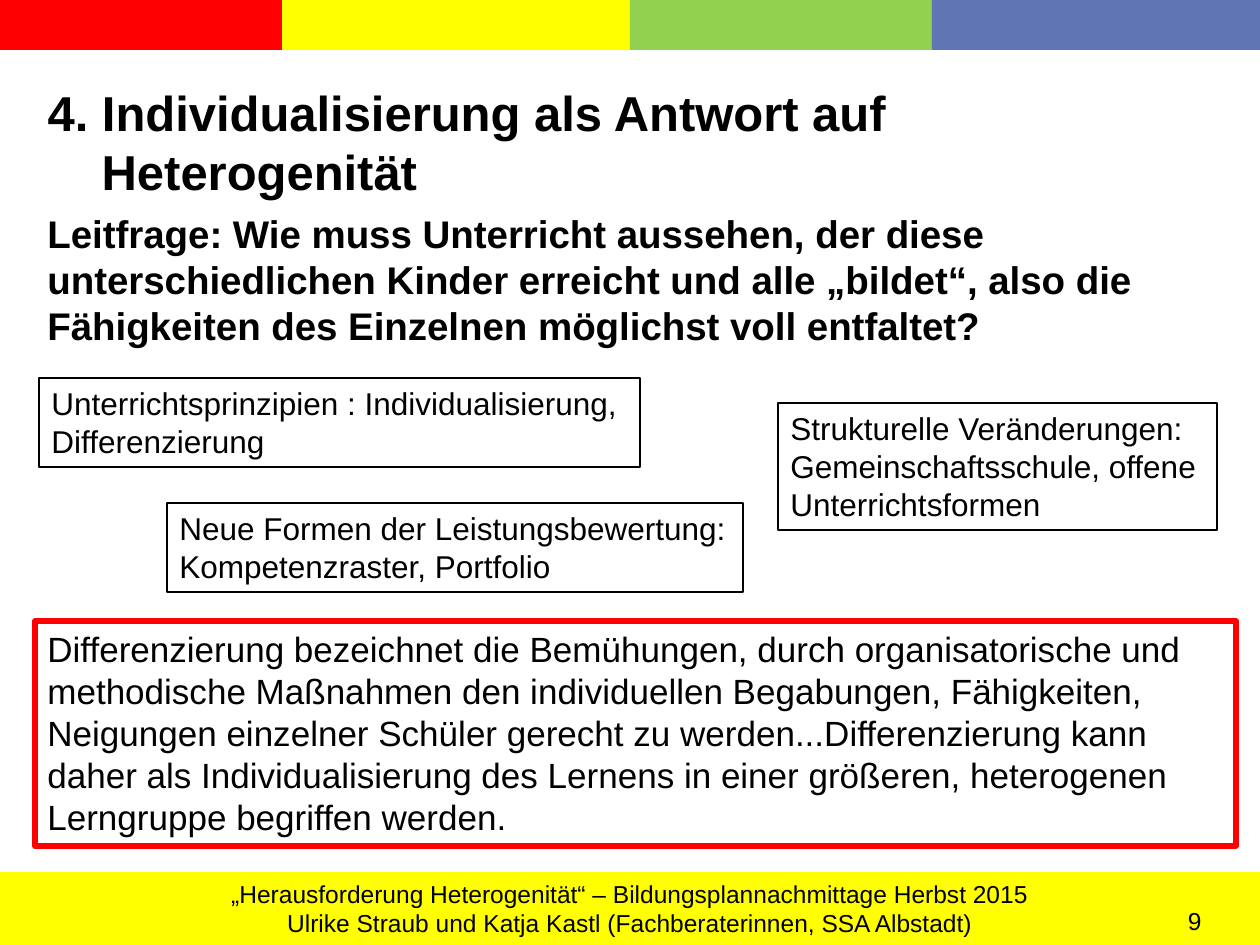
from dataclasses import dataclass
from itertools import pairwise

from pptx import Presentation
from pptx.dml.color import RGBColor
from pptx.enum.shapes import MSO_SHAPE as Shape
from pptx.enum.text import MSO_ANCHOR as Anchor, PP_ALIGN as Align
from pptx.util import Emu, Pt

PX = 914400 // 126
WIDTH, HEIGHT = 1260, 945
FONT = "Arial"
BLACK, RED, YELLOW = "000000", "FF0000", "FFFF00"


@dataclass
class Box:
    x: int
    y: int
    w: int
    h: int
    text: str
    size: int
    bold: bool = False
    line: str | None = None
    line_pt: float = 0.75


BAND_EDGES = [0, 282, 630, 932, WIDTH]
BAND_COLORS = [RED, YELLOW, "92D050", "6076B4"]

TITLE = Box(35, 76, 1170, 131,
            "4. Individualisierung als Antwort auf\vHeterogenität", 28, True)
TITLE_INDENT = 54

BOXES = [
    Box(35, 204, 1188, 152,
        "Leitfrage: Wie muss Unterricht aussehen, der diese unterschiedlichen "
        "Kinder erreicht und alle „bildet“, also die Fähigkeiten des Einzelnen "
        "möglichst voll entfaltet?", 22, True),
    Box(39, 378, 601, 89,
        "Unterrichtsprinzipien : Individualisierung, Differenzierung", 18, line=BLACK),
    Box(778, 403, 439, 127,
        "Strukturelle Veränderungen: Gemeinschaftsschule, offene "
        "Unterrichtsformen", 18, line=BLACK),
    Box(167, 503, 576, 89,
        "Neue Formen der Leistungsbewertung: Kompetenzraster, Portfolio", 18, line=BLACK),
    Box(35, 621, 1201, 225,
        "Differenzierung bezeichnet die Bemühungen, durch organisatorische und "
        "methodische Maßnahmen den individuellen Begabungen, Fähigkeiten, "
        "Neigungen einzelner Schüler gerecht zu werden...Differenzierung kann "
        "daher als Individualisierung des Lernens in einer größeren, heterogenen "
        "Lerngruppe begriffen werden.", 20, line=RED, line_pt=3),
]
FOOTER = Box(0, 872, WIDTH, 73,
             "„Herausforderung Heterogenität“ – Bildungsplannachmittage Herbst 2015\n"
             "Ulrike Straub und Katja Kastl (Fachberaterinnen, SSA Albstadt)", 14)
PAGE_NUMBER = Box(1188, 900, 69, 43, "9", 14)


def px(n: int) -> Emu:
    return Emu(n * PX)


def rgb(color: str) -> RGBColor:
    return RGBColor.from_string(color)


def place(box: Box) -> tuple[Emu, ...]:
    return px(box.x), px(box.y), px(box.w), px(box.h)


def write(sp, box: Box, align=Align.LEFT, anchor=Anchor.TOP) -> None:
    tf = sp.text_frame
    tf.word_wrap = True
    tf.vertical_anchor = anchor
    tf.text = box.text
    for p in tf.paragraphs:
        p.alignment = align
        p.font.name, p.font.size, p.font.bold = FONT, Pt(box.size), box.bold
        p.font.color.rgb = rgb(BLACK)


def add_rect(slide, x: int, y: int, w: int, h: int, color: str):
    """Add a filled rectangle without outline."""
    sp = slide.shapes.add_shape(Shape.RECTANGLE, px(x), px(y), px(w), px(h))
    sp.shadow.inherit = False
    sp.fill.solid()
    sp.fill.fore_color.rgb = rgb(color)
    sp.line.fill.background()
    return sp


def add_text(slide, box: Box):
    sp = slide.shapes.add_textbox(*place(box))
    write(sp, box)
    if box.line:
        sp.line.color.rgb = rgb(box.line)
        sp.line.width = Pt(box.line_pt)
    return sp


def format_title(sp, box: Box) -> None:
    """Place the title and hang its second line under the first word."""
    sp.left, sp.top, sp.width, sp.height = place(box)
    write(sp, box)
    pPr = sp.text_frame.paragraphs[0]._p.get_or_add_pPr()
    pPr.set("marL", str(px(TITLE_INDENT)))
    pPr.set("indent", str(-px(TITLE_INDENT)))


def main() -> None:
    prs = Presentation()
    prs.slide_width, prs.slide_height = px(WIDTH), px(HEIGHT)
    slide = prs.slides.add_slide(prs.slide_layouts[5])

    footer = add_rect(slide, FOOTER.x, FOOTER.y, FOOTER.w, FOOTER.h, YELLOW)
    write(footer, FOOTER, Align.CENTER, Anchor.MIDDLE)
    number = add_text(slide, PAGE_NUMBER)
    number.text_frame.margin_left = number.text_frame.margin_right = 0

    for (left, right), color in zip(pairwise(BAND_EDGES), BAND_COLORS):
        add_rect(slide, left, 0, right - left, 50, color)

    format_title(slide.shapes.title, TITLE)
    for box in BOXES:
        add_text(slide, box)

    prs.save("out.pptx")


if __name__ == "__main__":
    main()
